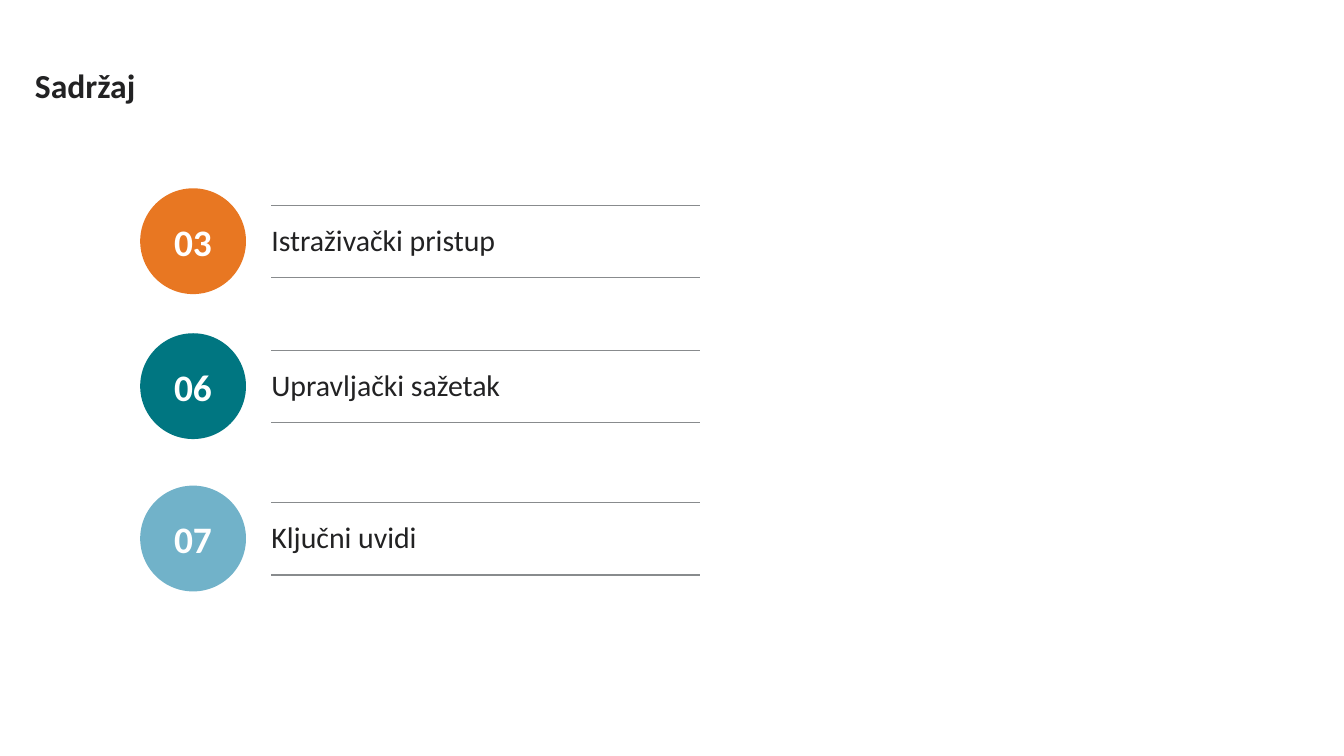
"""Build the contents slide with three numbered sections."""
from dataclasses import dataclass

from lxml.etree import SubElement
from pptx import Presentation
from pptx.dml.color import RGBColor
from pptx.enum.shapes import MSO_CONNECTOR, MSO_SHAPE
from pptx.enum.text import MSO_ANCHOR, MSO_AUTO_SIZE, PP_ALIGN
from pptx.oxml.ns import qn
from pptx.util import Cm, Pt


@dataclass(frozen=True)
class Theme:
    face: str = "Calibri"
    ink: str = "222223"
    rule: str = "888B8D"
    white: str = "FFFFFF"
    orange: str = "E87722"
    teal: str = "007681"
    blue: str = "71B2C9"
    title: int = 18
    number: int = 20
    label: int = 16


def write(shape, text, size, color, bold=False, align=PP_ALIGN.LEFT):
    frame = shape.text_frame
    frame.text = text
    frame.word_wrap = True
    frame.vertical_anchor = MSO_ANCHOR.MIDDLE
    para = frame.paragraphs[0]
    para.alignment = align
    font = para.font
    font.name, font.size, font.bold = theme.face, Pt(size), bold
    font.color.rgb = RGBColor.from_string(color)
    return para


def fit(shape, para):
    frame = shape.text_frame
    frame.margin_left = frame.margin_right = 0
    frame.margin_top = frame.margin_bottom = 0
    frame.auto_size = MSO_AUTO_SIZE.SHAPE_TO_FIT_TEXT
    para.line_spacing = 0.9
    para.space_before = Pt(0)


theme = Theme()
deck = Presentation()
deck.slide_width, deck.slide_height = Cm(25.4), Cm(14.29)
slide = deck.slides.add_slide(deck.slide_layouts[5])

title = slide.shapes.title
title.left, title.top, title.width, title.height = Cm(0.66), Cm(1.32), Cm(24.03), Cm(0.69)
fit(title, write(title, "Sadržaj", theme.title, theme.ink, True))

left, width = Cm(5.13), Cm(8.09)
items = [
    ("03", "Istraživački pristup", theme.orange, 3.56),
    ("06", "Upravljački sažetak", theme.teal, 6.3),
    ("07", "Ključni uvidi", theme.blue, 9.18),
]
for number, text, color, top in items:
    group = slide.shapes.add_group_shape().shapes

    disc = group.add_shape(MSO_SHAPE.OVAL, Cm(2.65), Cm(top), Cm(2), Cm(2))
    disc.shadow.inherit = False
    disc.fill.solid()
    disc.fill.fore_color.rgb = RGBColor.from_string(color)
    disc.line.fill.background()
    write(disc, number, theme.number, theme.white, True, PP_ALIGN.CENTER)

    label = group.add_textbox(left, Cm(top + 0.7), width, Cm(0.61))
    fit(label, write(label, text, theme.label, theme.ink))

    for drop in (0.32, 1.69):
        y = Cm(top + drop)
        rule = group.add_connector(MSO_CONNECTOR.STRAIGHT, left, y, left + width, y)
        rule.line.color.rgb = RGBColor.from_string(theme.rule)
        rule.line.width = Pt(0.75)
        SubElement(rule._element.spPr, qn("a:effectLst"))

deck.save("out.pptx")
